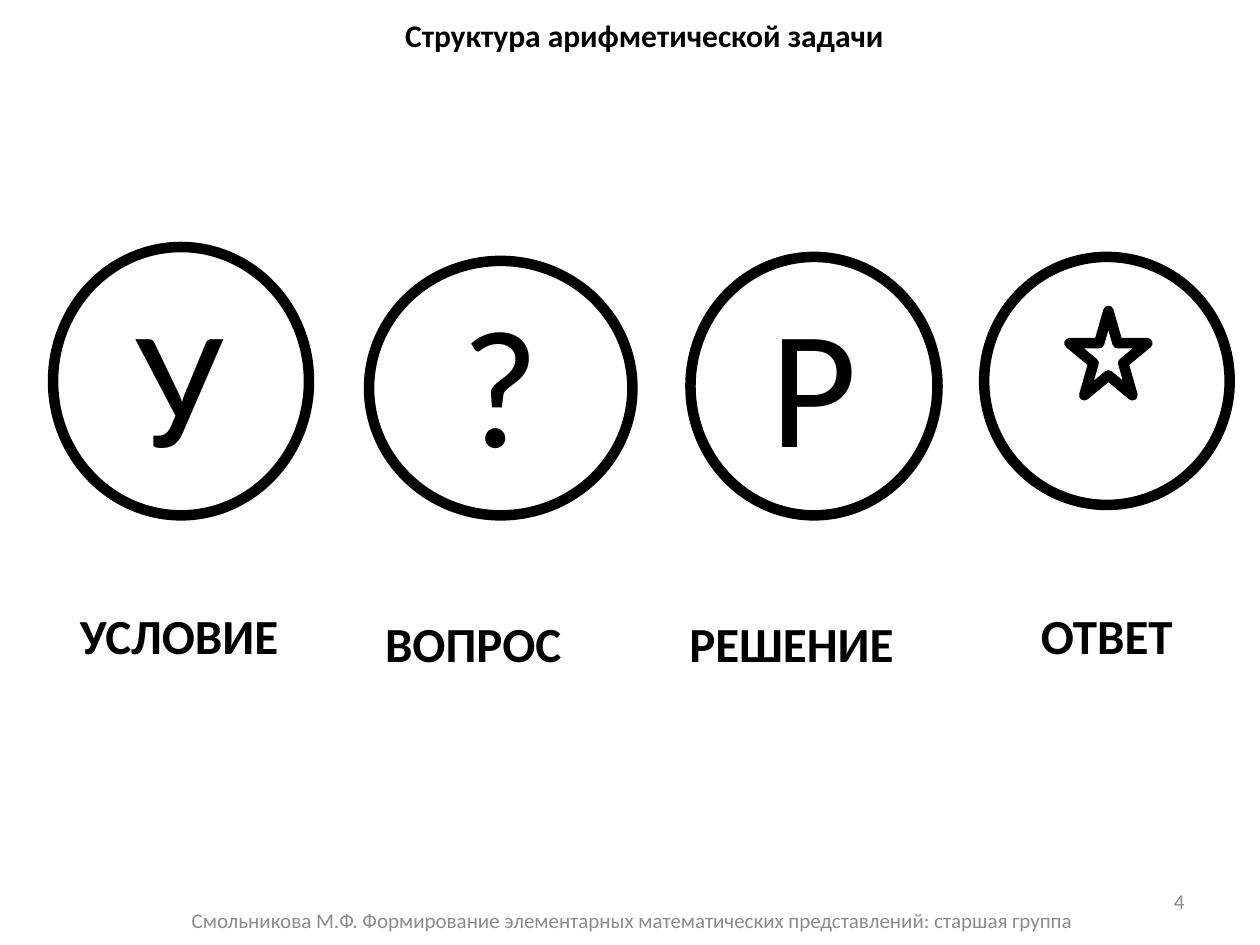
from typing import NamedTuple

from pptx import Presentation
from pptx.dml.color import RGBColor
from pptx.enum.shapes import MSO_SHAPE as Shape
from pptx.enum.text import MSO_ANCHOR as Anchor, PP_ALIGN as Align
from pptx.slide import Slide
from pptx.util import Cm, Pt

BLACK = RGBColor(0x00, 0x00, 0x00)
GREY = RGBColor(0x8C, 0x8C, 0x8C)
FONT = "Calibri"
LETTER_TOP, LETTER_WIDTH, LETTER_HEIGHT = 5.51, 2.54, 4.37
CAPTION_HEIGHT = 1.45


class Box(NamedTuple):
    left: float
    top: float
    width: float
    height: float

    def lengths(self) -> list[Cm]:
        return [Cm(value) for value in self]


class TextStyle(NamedTuple):
    size: int
    bold: bool = False
    color: RGBColor = BLACK
    align: Align = Align.CENTER
    anchor: Anchor = Anchor.TOP


class TaskPart(NamedTuple):
    circle: Box
    caption: str
    caption_left: float
    caption_top: float
    caption_width: float
    letter: str = ""
    letter_left: float = 0


LETTER = TextStyle(96)
TITLE = TextStyle(18, bold=True)
CAPTION = TextStyle(28, bold=True)
FOOTER = TextStyle(12, color=GREY, anchor=Anchor.MIDDLE)
PAGE_NUMBER = FOOTER._replace(align=Align.RIGHT)

TASK_PARTS = [
    TaskPart(Box(1.07, 4.98, 5.16, 5.41), "УСЛОВИЕ", 1.07, 12.09, 5.08, "У", 2.36),
    TaskPart(Box(7.44, 5.26, 5.31, 5.13), "ВОПРОС", 7.09, 12.24, 4.9, "?", 8.81),
    TaskPart(Box(13.92, 5.18, 4.98, 5.21), "РЕШЕНИЕ", 13.49, 12.24, 4.93, "Р", 15.14),
    TaskPart(Box(19.84, 5.18, 4.95, 5), "ОТВЕТ", 20.42, 12.09, 3.78),
]
ANSWER_STAR = Box(21.56, 6.27, 1.57, 1.7)


def add_outline(slide: Slide, kind: Shape, box: Box) -> None:
    shape = slide.shapes.add_shape(kind, *box.lengths())
    shape.shadow.inherit = False
    shape.fill.background()
    shape.line.color.rgb = BLACK
    shape.line.width = Pt(6)


def add_text(slide: Slide, text: str, box: Box, style: TextStyle) -> None:
    frame = slide.shapes.add_textbox(*box.lengths()).text_frame
    frame.word_wrap = True
    frame.vertical_anchor = style.anchor
    paragraph = frame.paragraphs[0]
    paragraph.alignment = style.align
    run = paragraph.add_run()
    run.text = text
    run.font.name = FONT
    run.font.size = Pt(style.size)
    run.font.bold = style.bold
    run.font.color.rgb = style.color


def add_task_part(slide: Slide, part: TaskPart) -> None:
    add_outline(slide, Shape.OVAL, part.circle)
    if part.letter:
        letter_box = Box(part.letter_left, LETTER_TOP, LETTER_WIDTH, LETTER_HEIGHT)
        add_text(slide, part.letter, letter_box, LETTER)
    caption_box = Box(part.caption_left, part.caption_top, part.caption_width, CAPTION_HEIGHT)
    add_text(slide, part.caption, caption_box, CAPTION)


def main() -> None:
    presentation = Presentation()
    presentation.slide_width, presentation.slide_height = Cm(25.4), Cm(19.05)
    slide = presentation.slides.add_slide(presentation.slide_layouts[6])

    add_text(slide, "Структура арифметической задачи", Box(7.09, 0.2, 11.81, 1.02), TITLE)
    for part in TASK_PARTS:
        add_task_part(slide, part)
    add_outline(slide, Shape.STAR_5_POINT, ANSWER_STAR)
    add_text(
        slide,
        "Смольникова М.Ф. Формирование элементарных математических представлений: старшая группа",
        Box(0.05, 18.03, 25.4, 1.02),
        FOOTER,
    )
    add_text(slide, "4", Box(18.21, 17.65, 5.92, 1.02), PAGE_NUMBER)

    presentation.save("out.pptx")


if __name__ == "__main__":
    main()
